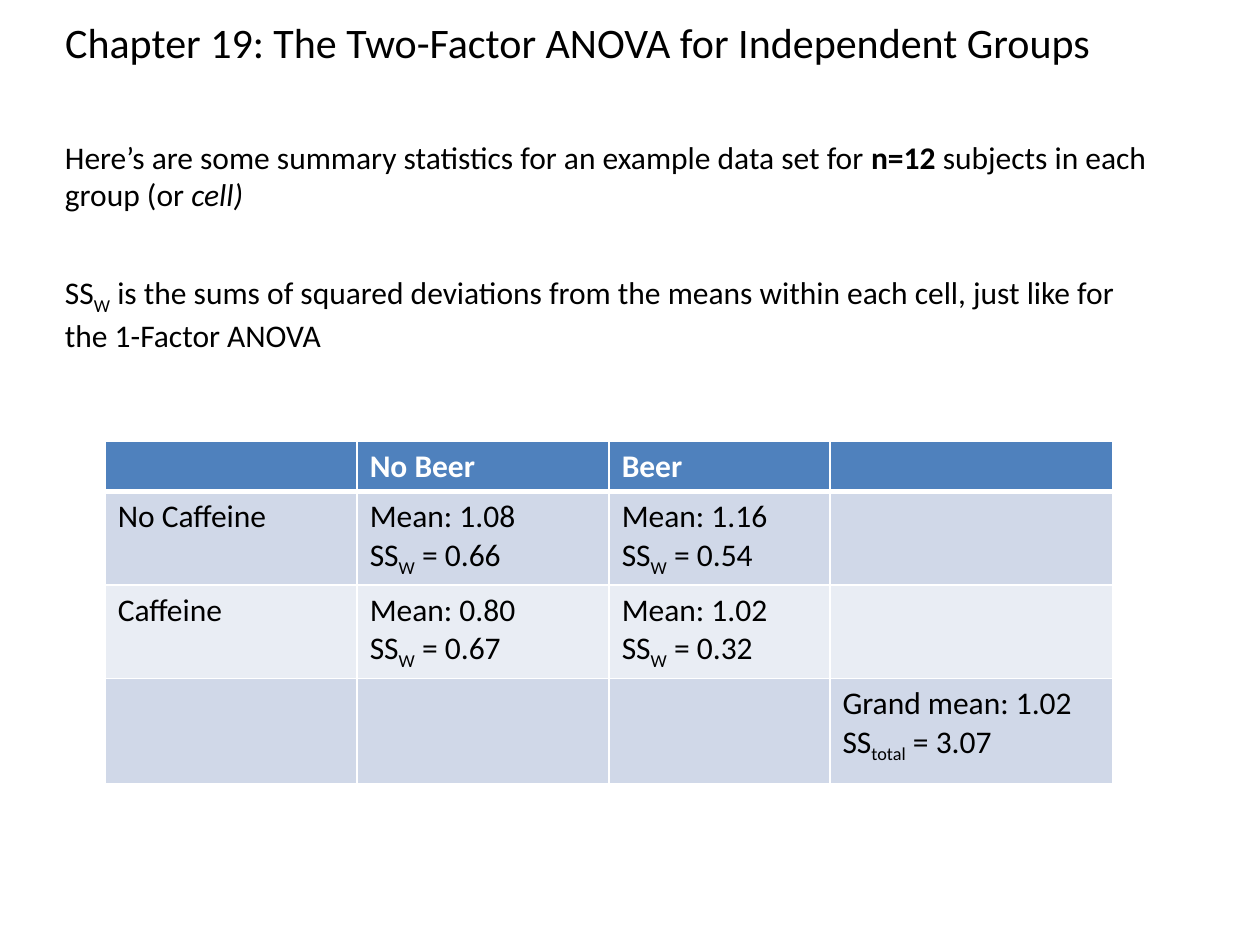
from dataclasses import dataclass

from lxml.etree import SubElement
from pptx import Presentation
from pptx.dml.color import RGBColor
from pptx.enum.text import MSO_ANCHOR, MSO_AUTO_SIZE, PP_ALIGN
from pptx.oxml.ns import qn
from pptx.util import Cm, Pt


@dataclass(frozen=True)
class Theme:
    font: str = "Calibri"
    title_size: int = 24
    body_size: int = 18
    text: str = "000000"
    white: str = "FFFFFF"
    header: str = "4F81BD"
    bands: tuple = ("D0D8E8", "E9EDF4")
    rule: int = 1
    header_rule: int = 3


class SlideBuilder:
    def __init__(self, slide, theme):
        self.s = slide
        self.theme = theme

    def runs(self, p, parts, size, color, bold=False):
        """Add runs; a part is plain text or (text, "bold" | "italic" | "sub")."""
        for part in parts:
            text, style = (part, "") if isinstance(part, str) else part
            r = p.add_run()
            r.text = text
            font = r.font
            font.name, font.size = self.theme.font, Pt(size)
            font.color.rgb = RGBColor.from_string(color)
            font.bold = bold or style == "bold"
            font.italic = style == "italic"
            if style == "sub":
                r._r.get_or_add_rPr().set("baseline", "-25000")

    def paragraphs(self, tf, lines, color, bold=False):
        for i, parts in enumerate(lines):
            p = tf.add_paragraph() if i else tf.paragraphs[0]
            self.runs(p, parts, self.theme.body_size, color, bold)

    def title(self, text, left, top, width, height):
        sp = self.s.shapes.title
        sp.left, sp.top, sp.width, sp.height = map(Cm, (left, top, width, height))
        tf = sp.text_frame
        tf.auto_size = MSO_AUTO_SIZE.SHAPE_TO_FIT_TEXT
        tf.vertical_anchor = MSO_ANCHOR.TOP
        p = tf.paragraphs[0]
        p.alignment = PP_ALIGN.LEFT
        self.runs(p, [text], self.theme.title_size, self.theme.text)

    def text(self, lines, left, top, width, height, gap):
        sp = self.s.shapes.add_textbox(*map(Cm, (left, top, width, height)))
        tf = sp.text_frame
        tf.word_wrap = True
        tf.auto_size = MSO_AUTO_SIZE.SHAPE_TO_FIT_TEXT
        self.paragraphs(tf, lines, self.theme.text)
        for p in tf.paragraphs[:-1]:
            p.space_after = Pt(gap)

    def borders(self, cell, **widths):
        tc_pr = cell._tc.get_or_add_tcPr()
        for side in "LRTB":
            width = widths.get(side, self.theme.rule)
            ln = SubElement(tc_pr, qn(f"a:ln{side}"), w=str(Pt(width)))
            fill = SubElement(ln, qn("a:solidFill"))
            SubElement(fill, qn("a:srgbClr"), val=self.theme.white)

    def table(self, rows, left, top, widths, heights):
        th = self.theme
        frame = self.s.shapes.add_table(
            len(heights), len(widths),
            *map(Cm, (left, top, sum(widths), sum(heights))))
        table = frame.table
        for column, width in zip(table.columns, widths):
            column.width = Cm(width)
        for i, (row, height) in enumerate(zip(rows, heights)):
            table.rows[i].height = Cm(height)
            is_header = i == 0
            fill = th.header if is_header else th.bands[(i - 1) % 2]
            # The heavy rule under the header is shared by the first two rows.
            heavy = {0: {"B": th.header_rule}, 1: {"T": th.header_rule}}.get(i, {})
            for j, lines in enumerate(row):
                cell = table.cell(i, j)
                self.borders(cell, **heavy)
                cell.fill.solid()
                cell.fill.fore_color.rgb = RGBColor.from_string(fill)
                color = th.white if is_header else th.text
                self.paragraphs(cell.text_frame, lines, color, is_header)


def stats(mean, ss, label="Mean", sub="W"):
    """Lines of a cell that gives a mean and a sum of squares."""
    return [[f"{label}: {mean}"], ["SS", (sub, "sub"), f" = {ss}"]]


def main():
    prs = Presentation()
    prs.slide_width, prs.slide_height = Cm(25.4), Cm(19.05)
    title_only = prs.slide_layouts[5]
    builder = SlideBuilder(prs.slides.add_slide(title_only), Theme())

    margin = 1.06
    builder.title("Chapter 19: The Two-Factor ANOVA for Independent Groups",
                  margin, 0.2, 23.06, 1.28)
    builder.text([
        ["Here’s are some summary statistics for an example data set for ",
         ("n=12", "bold"), " subjects in each group (or ", ("cell)", "italic")],
        ["SS", ("W", "sub"),
         " is the sums of squared deviations from the means within each cell,"
         " just like for the 1-Factor ANOVA"],
    ], margin, 2.65, 22.43, 4.52, gap=34)

    empty = []
    builder.table([
        [empty, [["No Beer"]], [["Beer"]], empty],
        [[["No Caffeine"]], stats("1.08", "0.66"), stats("1.16", "0.54"), empty],
        [[["Caffeine"]], stats("0.80", "0.67"), stats("1.02", "0.32"), empty],
        [empty, empty, empty, stats("1.02", "3.07", "Grand mean", "total")],
    ], 2.12, 8.89, widths=(5.08, 5.08, 4.45, 5.71), heights=(0.97, 1.68, 1.68, 2.13))

    prs.save("out.pptx")


if __name__ == "__main__":
    main()
